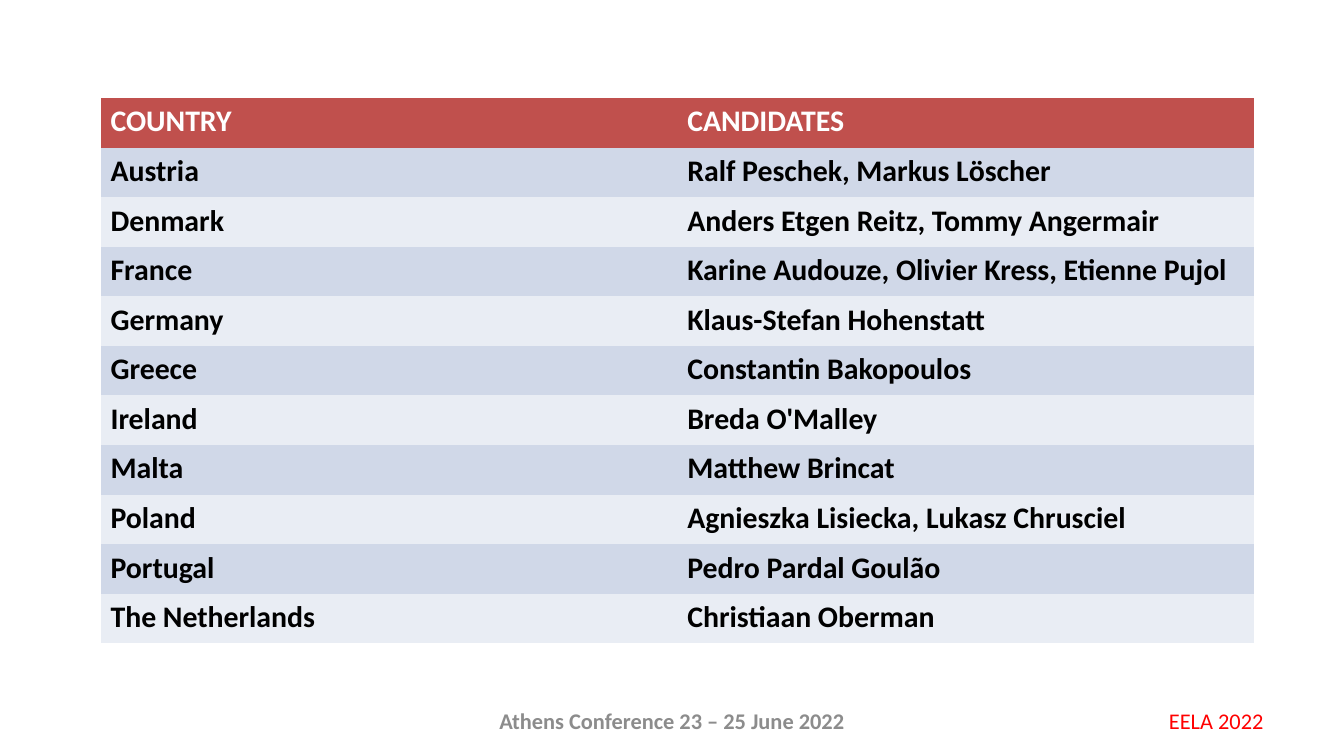
from pptx import Presentation
from pptx.dml.color import RGBColor as RGB
from pptx.enum.text import MSO_ANCHOR as ANCHOR, PP_ALIGN as ALIGN
from pptx.util import Pt

COLORS = {
    "header": "C0504D",
    "band_dark": "D0D8E8",
    "band_light": "E9EDF4",
    "white": "FFFFFF",
    "black": "000000",
    "gray": "8C8C8C",
    "red": "FF0000",
}
PLAIN_TABLE = "{2D5ABB26-0587-4C30-8999-92F81FD0307C}"
CANDIDATES = [
    ("COUNTRY", "CANDIDATES"),
    ("Austria", "Ralf Peschek, Markus Löscher"),
    ("Denmark", "Anders Etgen Reitz, Tommy Angermair"),
    ("France", "Karine Audouze, Olivier Kress, Etienne Pujol"),
    ("Germany", "Klaus-Stefan Hohenstatt"),
    ("Greece", "Constantin Bakopoulos"),
    ("Ireland", "Breda O'Malley"),
    ("Malta", "Matthew Brincat"),
    ("Poland", "Agnieszka Lisiecka, Lukasz Chrusciel"),
    ("Portugal", "Pedro Pardal Goulão"),
    ("The Netherlands", "Christiaan Oberman"),
]


def write(tf, text, size=12, color="black", bold=False, align=ALIGN.LEFT,
          spacing=1.0, font="Calibri"):
    p = tf.paragraphs[0]
    p.alignment = align
    p.line_spacing = spacing
    r = p.add_run()
    r.text = text
    r.font.name = font
    r.font.size = Pt(size)
    r.font.bold = bold
    r.font.color.rgb = RGB.from_string(COLORS[color])


class SlideBuilder:
    def __init__(self, slide, font="Calibri"):
        self.slide = slide
        self.font = font

    def text(self, text, x, y, w, h, **style):
        tf = self.slide.shapes.add_textbox(Pt(x), Pt(y), Pt(w), Pt(h)).text_frame
        tf.word_wrap = True
        tf.vertical_anchor = ANCHOR.MIDDLE
        write(tf, text, font=self.font, **style)

    def table(self, rows, x, y, col_w, row_h):
        n_cols = len(rows[0])
        frame = self.slide.shapes.add_table(
            len(rows), n_cols, Pt(x), Pt(y), Pt(col_w * n_cols), Pt(row_h * len(rows)))
        table = frame.table
        table._tbl.tblPr[0].text = PLAIN_TABLE
        for col in table.columns:
            col.width = Pt(col_w)
        for i, values in enumerate(rows):
            table.rows[i].height = Pt(row_h)
            fill = "header" if i == 0 else "band_dark" if i % 2 else "band_light"
            for cell, value in zip(table.rows[i].cells, values):
                cell.margin_left = cell.margin_right = Pt(5.25)
                cell.margin_top = cell.margin_bottom = 0
                cell.fill.solid()
                cell.fill.fore_color.rgb = RGB.from_string(COLORS[fill])
                write(cell.text_frame, value, size=16, bold=True, spacing=1.15,
                      color="white" if i == 0 else "black", font=self.font)


def main():
    prs = Presentation()
    prs.slide_width, prs.slide_height = Pt(720), Pt(405)
    s = SlideBuilder(prs.slides.add_slide(prs.slide_layouts[6]))
    s.table(CANDIDATES, 54, 52.5, 309, 26.57)
    s.text("Athens Conference 23 – 25 June 2022", 246, 375, 228, 21.6,
           color="gray", bold=True, align=ALIGN.CENTER)
    s.text("EELA 2022", 516, 375, 168, 21.6, color="red", align=ALIGN.RIGHT)
    prs.save("out.pptx")


if __name__ == "__main__":
    main()
